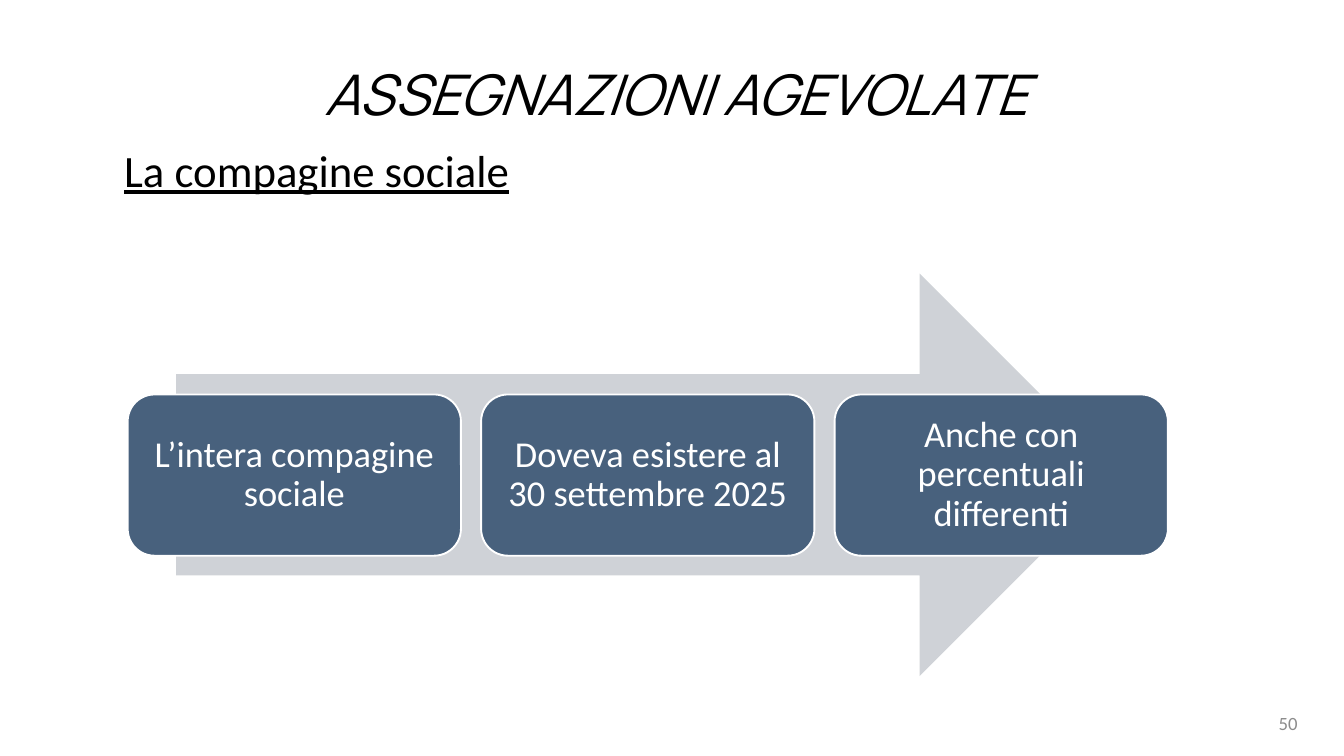
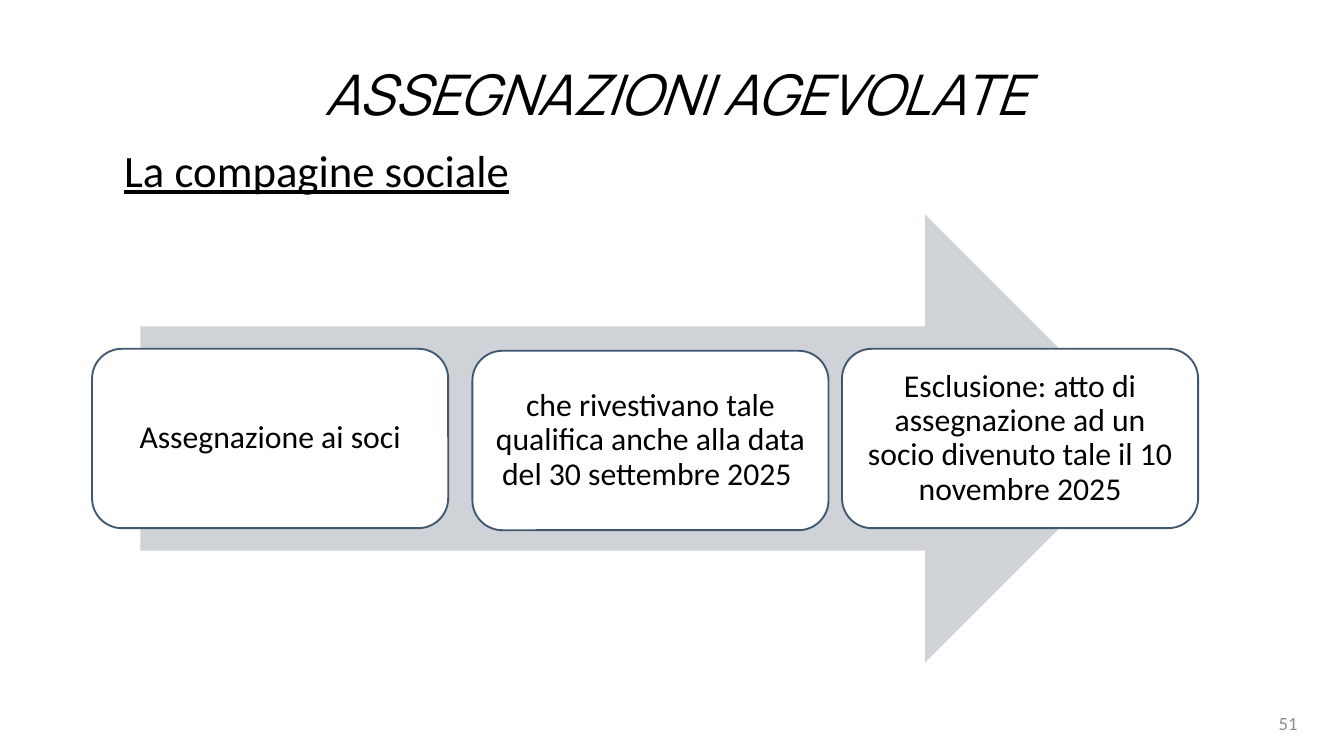
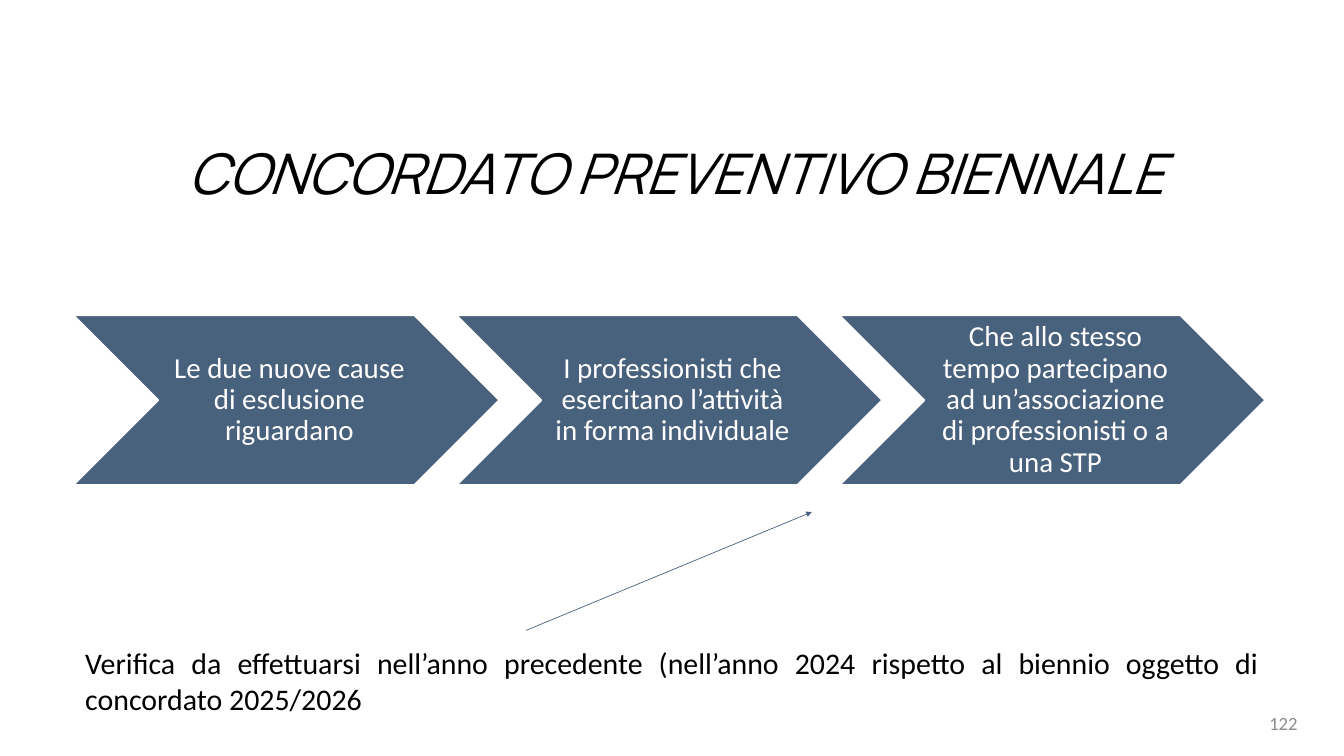
from dataclasses import dataclass

from lxml import etree
from pptx import Presentation
from pptx.dml.color import RGBColor
from pptx.enum.shapes import MSO_CONNECTOR, MSO_SHAPE
from pptx.enum.text import MSO_ANCHOR, MSO_AUTO_SIZE, PP_ALIGN
from pptx.oxml.ns import qn
from pptx.util import Inches, Pt

LEFT, CENTER, RIGHT, JUSTIFY = PP_ALIGN.LEFT, PP_ALIGN.CENTER, PP_ALIGN.RIGHT, PP_ALIGN.JUSTIFY
TOP, MIDDLE = MSO_ANCHOR.TOP, MSO_ANCHOR.MIDDLE
GROW, FIXED = MSO_AUTO_SIZE.SHAPE_TO_FIT_TEXT, MSO_AUTO_SIZE.NONE
ARROW, CARD, CHEVRON = MSO_SHAPE.RIGHT_ARROW, MSO_SHAPE.ROUNDED_RECTANGLE, MSO_SHAPE.CHEVRON
STRAIGHT = MSO_CONNECTOR.STRAIGHT


@dataclass(frozen=True)
class Theme:
    """Colours, fonts and type sizes shared by the slides."""
    ink: str = "000000"
    white: str = "FFFFFF"
    blue: str = "48617D"
    outline: str = "415871"
    pointer: str = "455F7C"
    pale: str = "CFD2D7"
    grey: str = "8C8C8C"
    body: str = "Calibri"
    display: str = "Manrope"
    title: int = 60
    subtitle: int = 48
    card_large: int = 39
    card_small: int = 34
    note: int = 32
    chevron: int = 31
    page: int = 20


T = Theme()
DARK = {"fill": T.blue, "line": T.white, "color": T.white}
LIGHT = {"fill": T.white, "line": T.outline, "color": T.ink}


def set_attrs(target, values):
    """Set every attribute named in a dict."""
    for name, value in values.items():
        setattr(target, name, value)


def write(sp, text, size, color=T.ink, align=LEFT, anchor=TOP, grow=False,
          insets=(0.1, 0.05, 0.1, 0.05), spacing=None, name=T.body, **font):
    """Write one formatted paragraph into a shape."""
    tf = sp.text_frame
    sides = ("margin_left", "margin_top", "margin_right", "margin_bottom")
    set_attrs(tf, {"word_wrap": True, "vertical_anchor": anchor,
                   "auto_size": GROW if grow else FIXED,
                   **dict(zip(sides, map(Inches, insets)))})
    p = tf.paragraphs[0]
    set_attrs(p, {"alignment": align, "line_spacing": spacing})
    r = p.add_run()
    r.text = text
    set_attrs(r.font, {"name": name, "size": Pt(size), **font})
    r.font.color.rgb = RGBColor.from_string(color)


def add_text(s, box, text, size, **style):
    """Add a text box."""
    write(s.shapes.add_textbox(*map(Inches, box)), text, size, **style)


def add_block(s, kind, box, fill, line=None):
    """Add a flat preset shape."""
    sp = s.shapes.add_shape(kind, *map(Inches, box))
    sp.shadow.inherit = False
    sp.fill.solid()
    sp.fill.fore_color.rgb = RGBColor.from_string(fill)
    if line:
        sp.line.color.rgb = RGBColor.from_string(line)
        sp.line.width = Pt(2)
    else:
        sp.line.fill.background()
    return sp


def add_step(s, kind, box, text, size, insets, look):
    """Add a shape that holds one step of a process."""
    sp = add_block(s, kind, box, look["fill"], look["line"])
    write(sp, text, size, color=look["color"], align=CENTER, anchor=MIDDLE,
          insets=insets, spacing=0.9)


def new_slide(prs, title, page, title_top=0.58):
    """Add a slide with its title and page number."""
    s = prs.slides.add_slide(prs.slide_layouts[6])
    add_text(s, (14.51, 10.46, 4.9, 0.59), str(page), T.page, color=T.grey,
             align=RIGHT, anchor=MIDDLE)
    add_text(s, (1.5, title_top, 17.12, 1.28), title, T.title, name=T.display,
             italic=True, align=CENTER, spacing=1.25, grow=True)
    return s


def arrow_process(s, box, card, offsets, texts, size, inset, look):
    """Place cards over a wide arrow, offset from its box."""
    add_block(s, ARROW, box, T.pale)
    left, top = box[:2]
    for (dx, dy), text in zip(offsets, texts):
        add_step(s, CARD, (left + dx, top + dy, *card), text, size, (inset,) * 4, look)


def chevron_process(s, box, pitch, texts):
    """Place a row of chevrons, the first one in the given box."""
    left, top, width, height = box
    for i, text in enumerate(texts):
        add_step(s, CHEVRON, (left + i * pitch, top, width, height), text,
                 T.chevron, (0.14, 0.05, 0.05, 0.05), DARK)


def add_pointer(s, start, end):
    """Draw a thin line with an arrowhead at its end."""
    cx = s.shapes.add_connector(STRAIGHT, *map(Inches, (*start, *end)))
    cx.line.color.rgb = RGBColor.from_string(T.pointer)
    cx.line.width = Pt(0.75)
    etree.SubElement(cx.line._get_or_add_ln(), qn("a:tailEnd"), type="triangle")
    etree.SubElement(cx._element.spPr, qn("a:effectLst"))


def members_slide(prs, page, **process):
    """Build a slide about the company members."""
    s = new_slide(prs, "ASSEGNAZIONI AGEVOLATE", page)
    add_text(s, (1.75, 2.07, 7.43, 0.91), "La compagine sociale", T.subtitle,
             underline=True, grow=True)
    arrow_process(s, **process)


def agreement_slide(prs, page):
    """Build the slide about the two-year agreement."""
    s = new_slide(prs, "CONCORDATO PREVENTIVO BIENNALE", page, title_top=1.76)
    chevron_process(s, (1.09, 4.69, 6.34, 2.53), 5.7, [
        "Le due nuove cause di esclusione riguardano",
        "I professionisti che esercitano l’attività in forma individuale",
        "Che allo stesso tempo partecipano ad un’associazione di professionisti o a una STP",
    ])
    add_text(s, (1.17, 9.54, 17.67, 1.18),
             "Verifica da effettuarsi nell’anno precedente (nell’anno 2024 rispetto "
             "al biennio oggetto di concordato 2025/2026",
             T.note, align=JUSTIFY, grow=True)
    add_pointer(s, (7.83, 9.38), (12.08, 7.62))


def main():
    """Build and save the presentation."""
    prs = Presentation()
    set_attrs(prs, {"slide_width": Inches(20), "slide_height": Inches(11.25)})
    members_slide(
        prs, 50, box=(2.62, 4.07, 14.06, 5.99), card=(4.96, 2.4),
        offsets=[(-0.72 + i * 5.26, 1.8) for i in range(3)],
        texts=["L’intera compagine sociale",
               "Doveva esistere al 30 settembre 2025",
               "Anche con percentuali differenti"],
        size=T.card_large, inset=0.16, look=DARK)
    members_slide(
        prs, 51, box=(2.09, 3.19, 15.01, 6.67), card=(5.3, 2.67),
        offsets=[(-0.72, 2), (4.94, 2.03), (10.44, 2)],
        texts=["Assegnazione ai soci",
               "che rivestivano tale qualifica anche alla data del 30 settembre 2025 ",
               "Esclusione: atto di assegnazione ad un socio divenuto tale il 10 novembre 2025"],
        size=T.card_small, inset=0.14, look=LIGHT)
    agreement_slide(prs, 122)
    prs.save("out.pptx")


if __name__ == "__main__":
    main()
